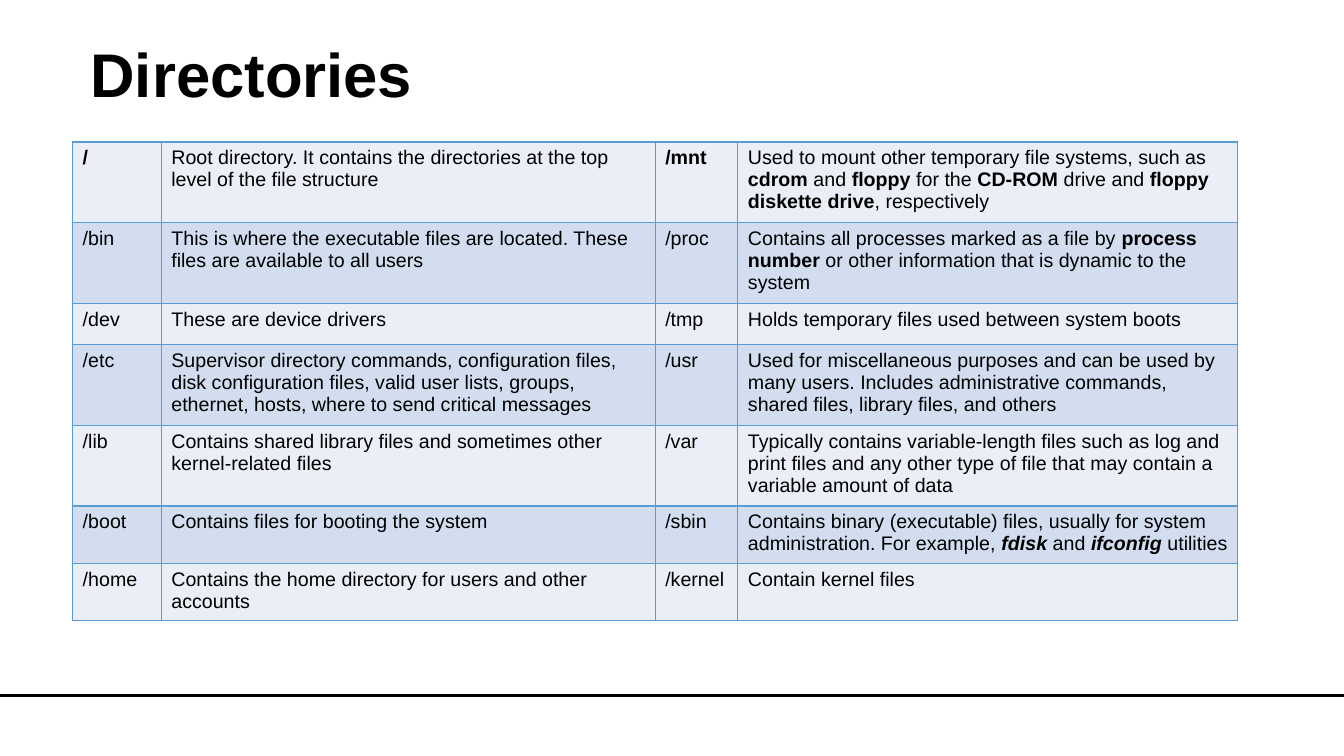
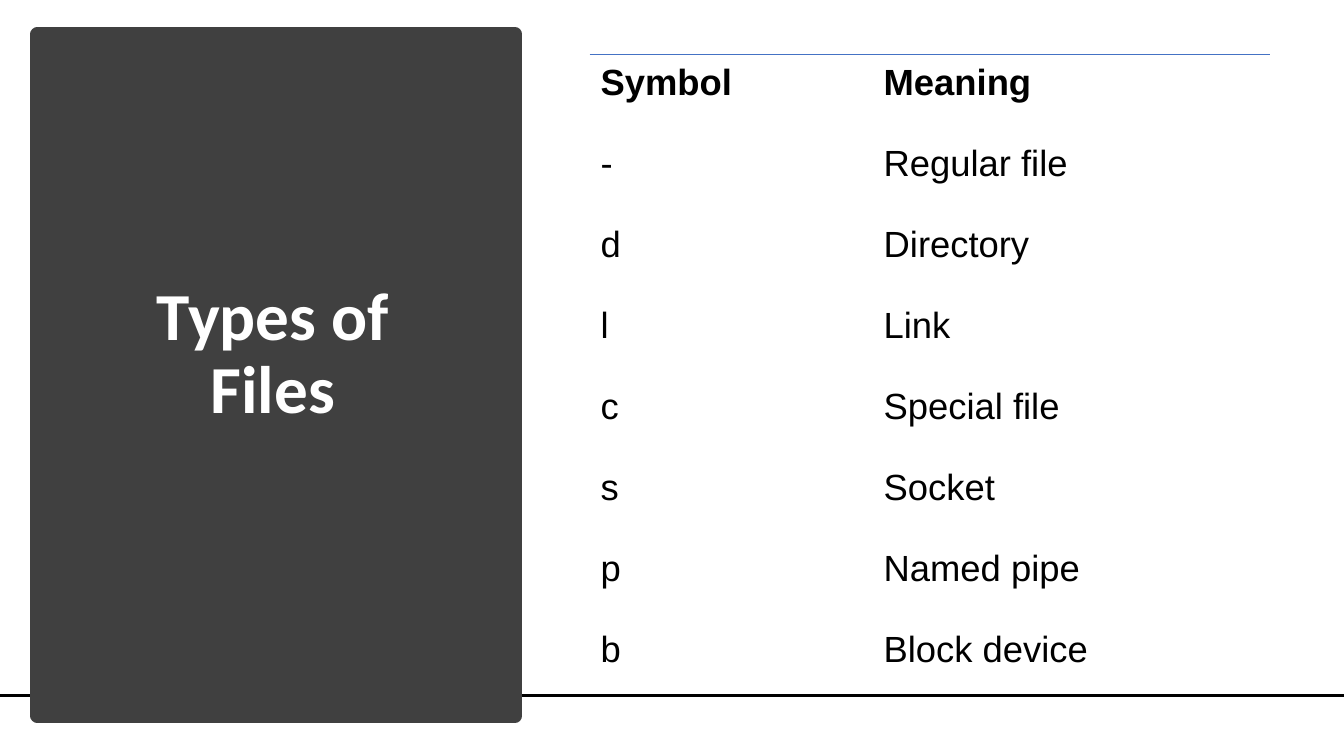
from dataclasses import dataclass

from lxml.etree import SubElement
from pptx import Presentation
from pptx.dml.color import RGBColor
from pptx.enum.shapes import MSO_CONNECTOR, MSO_SHAPE
from pptx.enum.text import MSO_ANCHOR, PP_ALIGN
from pptx.oxml.ns import qn
from pptx.util import Inches, Pt

COLS, ROWS = 32, 18
UNIT = Inches(5) / 12


@dataclass(frozen=True)
class Theme:
    ink: str = "000000"
    paper: str = "FFFFFF"
    panel: str = "404040"
    light: str = "EAEFF7"
    dark: str = "D2DEEF"
    grid: str = "5B9BD5"
    rule: str = "4472C4"
    sans: str = "Arial"
    head: str = "Calibri"
    title: int = 44
    large: int = 48
    small: int = 14
    body: int = 26
    thin: int = 1
    base: int = 2
    edge: int = 10


def span(n):
    """Turn grid steps into a length."""
    return round(n * UNIT)


def tint(code):
    return RGBColor.from_string(code)


def style(para, face, size, color, bold=False):
    font = para.font
    font.name, font.size, font.bold = face, Pt(size), bold
    font.color.rgb = tint(color)


def fill_text(para, text):
    """Write text; *x* is bold and *~x* is bold italic."""
    for n, part in enumerate(text.split("*")):
        if part:
            run = para.add_run()
            run.text = part.lstrip("~")
            if n % 2:
                run.font.bold = True
                if part.startswith("~"):
                    run.font.italic = True


def border(cell, sides, color, width):
    """Draw the named sides of a cell and clear the others."""
    props = cell._tc.get_or_add_tcPr()
    for side in "LRTB":
        line = SubElement(props, qn(f"a:ln{side}"))
        if side in sides:
            line.set("w", str(Pt(width)))
            fill = SubElement(line, qn("a:solidFill"))
            SubElement(fill, qn("a:srgbClr")).set("val", color)
        else:
            SubElement(line, qn("a:noFill"))


class Deck:
    def __init__(self, theme):
        self.theme = theme
        self.file = Presentation()
        self.file.slide_width = span(COLS)
        self.file.slide_height = span(ROWS)

    def page(self):
        """Start a slide with the shared base line."""
        self.shapes = self.file.slides.add_slide(self.file.slide_layouts[6]).shapes
        y = span(16.56)
        line = self.shapes.add_connector(MSO_CONNECTOR.STRAIGHT, 0, y, span(COLS), y)
        line.line.color.rgb = tint(self.theme.ink)
        line.line.width = Pt(self.theme.base)
        SubElement(line._element.spPr, qn("a:effectLst"))

    def title(self, text, area, face, size, color,
              align=PP_ALIGN.LEFT, anchor=MSO_ANCHOR.TOP):
        frame = self.shapes.add_textbox(*map(span, area)).text_frame
        frame.word_wrap = True
        frame.vertical_anchor = anchor
        para = frame.paragraphs[0]
        para.text = text
        para.alignment = align
        para.line_spacing = 0.9
        style(para, face, size, color, True)

    def panel(self, area):
        box = self.shapes.add_shape(MSO_SHAPE.RECTANGLE, *map(span, area))
        box.shadow.inherit = False
        box.fill.solid()
        box.fill.fore_color.rgb = box.line.color.rgb = tint(self.theme.panel)
        box.line.width = Pt(self.theme.edge)

    def table(self, data, left, top, widths, step, paint):
        """Build a table; paint(cell, row) styles each cell."""
        table = self.shapes.add_table(
            len(data), len(widths), span(left), span(top),
            span(sum(widths)), span(step * len(data))).table
        table.first_row = table.horz_banding = False
        for col, width in zip(table.columns, widths):
            col.width = span(width)
        for r, texts in enumerate(data):
            table.rows[r].height = span(step)
            for c, text in enumerate(texts):
                cell = table.cell(r, c)
                fill_text(cell.text_frame.paragraphs[0], text)
                paint(cell, r)

    def banded(self, cell, row):
        look = self.theme
        border(cell, "LRTB", look.grid, look.thin)
        cell.fill.solid()
        cell.fill.fore_color.rgb = tint(look.dark if row % 2 else look.light)
        style(cell.text_frame.paragraphs[0], look.sans, look.small, look.ink)

    def plain(self, cell, row):
        look = self.theme
        border(cell, "" if row else "T", look.rule, look.thin)
        cell.fill.background()
        cell.margin_left = cell.margin_right = span(0.26)
        cell.margin_top, cell.margin_bottom = span(0.19), span(0.5)
        para = cell.text_frame.paragraphs[0]
        para.alignment = PP_ALIGN.JUSTIFY
        para.space_after = Pt(8)
        style(para, look.sans, look.body, look.ink, row == 0)


DIRS = [
    ("*/*", "Root directory. It contains the directories at the top level of the file structure",
     "*/mnt*", "Used to mount other temporary file systems, such as *cdrom* and *floppy* "
     "for the *CD-ROM* drive and *floppy diskette drive*, respectively"),
    ("/bin", "This is where the executable files are located. "
     "These files are available to all users",
     "/proc", "Contains all processes marked as a file by *process number* "
     "or other information that is dynamic to the system"),
    ("/dev", "These are device drivers",
     "/tmp", "Holds temporary files used between system boots"),
    ("/etc", "Supervisor directory commands, configuration files, disk configuration files, "
     "valid user lists, groups, ethernet, hosts, where to send critical messages",
     "/usr", "Used for miscellaneous purposes and can be used by many users. "
     "Includes administrative commands, shared files, library files, and others"),
    ("/lib", "Contains shared library files and sometimes other kernel-related files",
     "/var", "Typically contains variable-length files such as log and print files "
     "and any other type of file that may contain a variable amount of data"),
    ("/boot", "Contains files for booting the system",
     "/sbin", "Contains binary (executable) files, usually for system administration. "
     "For example, *~fdisk* and *~ifconfig* utilities"),
    ("/home", "Contains the home directory for users and other accounts",
     "/kernel", "Contain kernel files"),
]

TYPES = [
    ("Symbol", "Meaning"), ("-", "Regular file"), ("d", "Directory"), ("l", "Link"),
    ("c", "Special file"), ("s", "Socket"), ("p", "Named pipe"), ("b", "Block device"),
]


def main():
    look = Theme()
    deck = Deck(look)

    deck.page()
    deck.title("Directories", (1.92, 0.94, 27.6, 3.48), look.sans, look.title, look.ink)
    deck.table(DIRS, 1.73, 3.38, (2.11, 11.76, 1.97, 11.9), 0.98, deck.banded)

    deck.page()
    deck.panel((0.89, 0.82, 11.38, 16.22))
    deck.title("Types of Files", (1.94, 1.94, 9.12, 13.03), look.head, look.large,
               look.paper, PP_ALIGN.CENTER, MSO_ANCHOR.MIDDLE)
    deck.table(TYPES, 14.04, 1.3, (6.74, 9.46), 1.93, deck.plain)

    deck.file.save("out.pptx")


if __name__ == "__main__":
    main()
